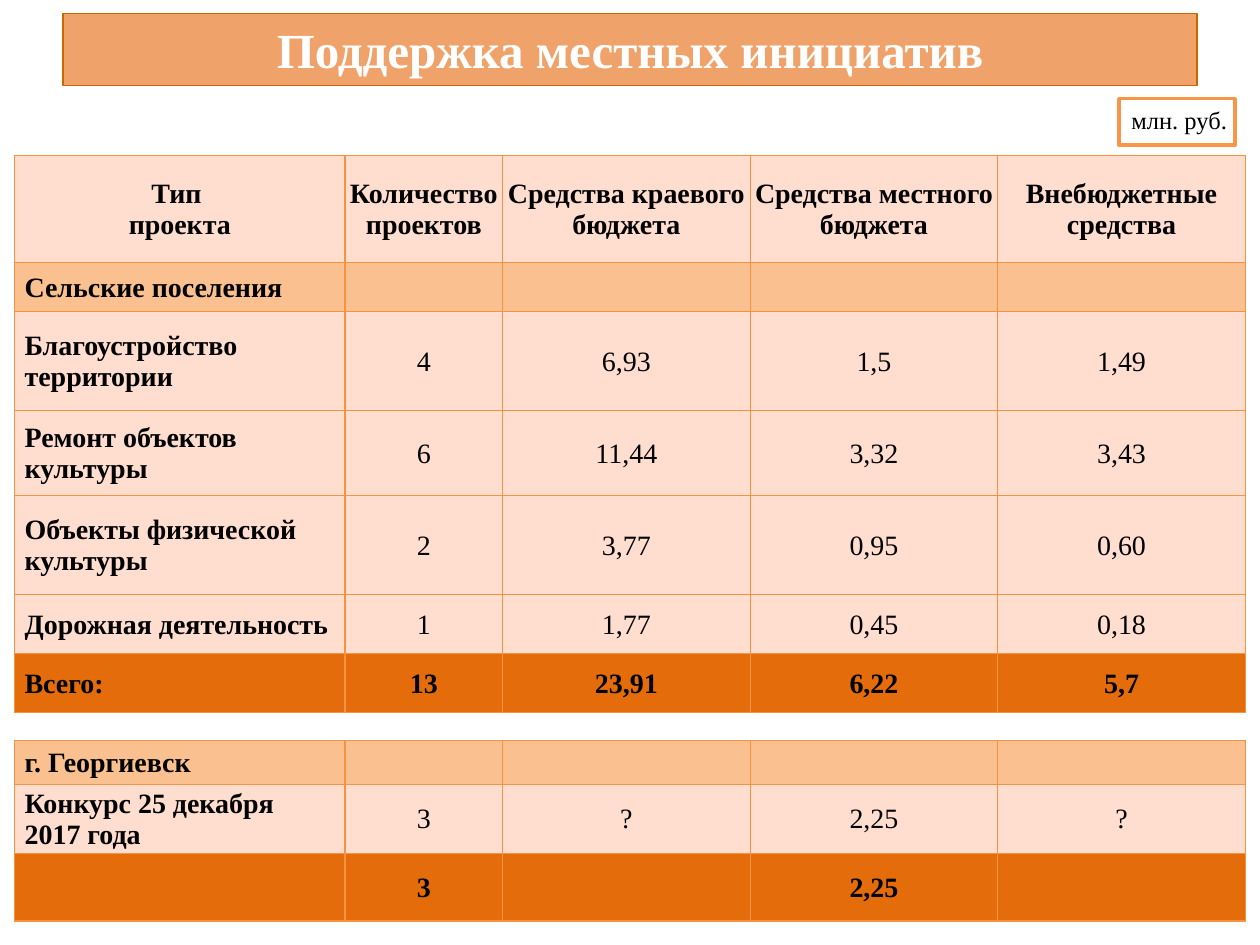
"""Build the slide on support for local initiatives."""
from dataclasses import dataclass

from lxml import etree
from pptx import Presentation
from pptx.dml.color import RGBColor as Rgb
from pptx.enum import text as tx
from pptx.oxml import ns
from pptx.util import Pt


@dataclass(frozen=True)
class Theme:
    font: str = "Times New Roman"
    head: float = 28
    body: float = 16
    note: float = 14
    white: str = "FFFFFF"
    ink: str = "000000"
    banner: str = "E97C2B"
    edge: str = "CC6600"
    frame: str = "F79646"
    grid: str = "F69240"
    pale: str = "FFDED0"
    group: str = "FAC090"
    total: str = "E46C0A"


@dataclass(frozen=True)
class Row:
    label: str
    vals: tuple[str, ...]
    high: float
    fill: str
    bold: bool = False


@dataclass(frozen=True)
class Grid:
    top: float
    rows: tuple[Row, ...]
    header: bool = False


T = Theme()
LEFT = 8.4
COLS = (188.8, 90, 141.5, 141.5, 141.5)
NONE = ("",) * 4

RURAL = Grid(88.6, (
    Row("Тип \nпроекта", ("Количество проектов", "Средства краевого бюджета",
                          "Средства местного бюджета", "Внебюджетные средства"),
        61.4, T.pale, True),
    Row("Сельские поселения", NONE, 28, T.group),
    Row("Благоустройство территории", ("4", "6,93", "1,5", "1,49"), 56.6, T.pale),
    Row("Ремонт объектов культуры", ("6", "11,44", "3,32", "3,43"), 48.6, T.pale),
    Row("Объекты физической культуры", ("2", "3,77", "0,95", "0,60"), 56.6, T.pale),
    Row("Дорожная деятельность", ("1", "1,77", "0,45", "0,18"), 33.7, T.pale),
    Row("Всего:", ("13", "23,91", "6,22", "5,7"), 33.7, T.total, True),
), header=True)

TOWN = Grid(423.2, (
    Row("г. Георгиевск", NONE, 25.2, T.group),
    Row("Конкурс 25 декабря\n2017 года", ("3", "?", "2,25", "?"), 38.8, T.pale),
    Row("", ("3", "", "2,25", ""), 38.8, T.total, True),
))


def write(frame, words: str, size: float, color: str, bold: bool, align) -> None:
    """Set the words of a text frame and format them."""
    frame.text = words
    for para in frame.paragraphs:
        para.alignment = align
        for run in para.runs:
            font = run.font
            font.name, font.size, font.bold = T.font, Pt(size), bold
            font.color.rgb = Rgb.from_string(color)


def paint(shape, fill: str, line: str, width: float) -> None:
    """Give a shape a solid fill and an outline."""
    shape.fill.solid()
    shape.fill.fore_color.rgb = Rgb.from_string(fill)
    shape.line.color.rgb = Rgb.from_string(line)
    shape.line.width = Pt(width)


def border(cell) -> None:
    """Draw the four borders of a cell."""
    props = cell._tc.get_or_add_tcPr()
    for side in ("lnL", "lnR", "lnT", "lnB"):
        line = etree.SubElement(props, ns.qn(f"a:{side}"), w=str(Pt(0.75)))
        fill = etree.SubElement(line, ns.qn("a:solidFill"))
        etree.SubElement(fill, ns.qn("a:srgbClr"), val=T.grid)


def draw_cell(cell, words: str, row: Row, label: bool, bold: bool) -> None:
    """Fill one cell with its words, borders and colour."""
    border(cell)
    cell.fill.solid()
    cell.fill.fore_color.rgb = Rgb.from_string(row.fill)
    cell.margin_left = Pt(5.7 if label else 0.7)
    cell.margin_right = cell.margin_top = Pt(0.7)
    cell.margin_bottom = Pt(0)
    cell.vertical_anchor = tx.MSO_ANCHOR.MIDDLE
    align = tx.PP_ALIGN.LEFT if label else tx.PP_ALIGN.CENTER
    write(cell.text_frame, words, T.body, T.ink, bold, align)


def draw_grid(slide, grid: Grid) -> None:
    """Add one table to the slide."""
    high = sum(row.high for row in grid.rows)
    table = slide.shapes.add_table(len(grid.rows), len(COLS), Pt(LEFT), Pt(grid.top),
                                   Pt(sum(COLS)), Pt(high)).table
    table.first_row = grid.header
    table.horz_banding = False
    for col, width in zip(table.columns, COLS):
        col.width = Pt(width)
    for r, row in enumerate(grid.rows):
        table.rows[r].height = Pt(row.high)
        for c, words in enumerate((row.label, *row.vals)):
            label = c == 0 and not (grid.header and r == 0)
            draw_cell(table.cell(r, c), words, row, label, row.bold or c == 0)


def draw_title(slide, words: str) -> None:
    """Turn the title placeholder into the banner."""
    title = slide.shapes.title
    title.left, title.top, title.width, title.height = Pt(36), Pt(7.7), Pt(648), Pt(41)
    paint(title, T.banner, T.edge, 0.75)
    color = title.fill._xPr.find(f".//{ns.qn('a:srgbClr')}")
    etree.SubElement(color, ns.qn("a:alpha"), val="70000")
    frame = title.text_frame
    frame.word_wrap = True
    frame.auto_size = tx.MSO_AUTO_SIZE.NONE
    frame.vertical_anchor = tx.MSO_ANCHOR.MIDDLE
    write(frame, words, T.head, T.white, True, tx.PP_ALIGN.CENTER)


def draw_unit(slide, words: str) -> None:
    """Add the framed unit of measure."""
    box = slide.shapes.add_textbox(Pt(639.4), Pt(56.4), Pt(66.4), Pt(26.6))
    paint(box, T.white, T.frame, 2)
    frame = box.text_frame
    frame.word_wrap = False
    frame.margin_right = Pt(0)
    write(frame, words, T.note, T.ink, False, tx.PP_ALIGN.LEFT)


def main() -> None:
    """Build and save the deck."""
    deck = Presentation()
    deck.slide_width, deck.slide_height = Pt(720), Pt(540)
    slide = deck.slides.add_slide(deck.slide_layouts[5])
    draw_title(slide, "Поддержка местных инициатив")
    draw_grid(slide, RURAL)
    draw_unit(slide, "млн. руб.")
    draw_grid(slide, TOWN)
    deck.save("out.pptx")


if __name__ == "__main__":
    main()
